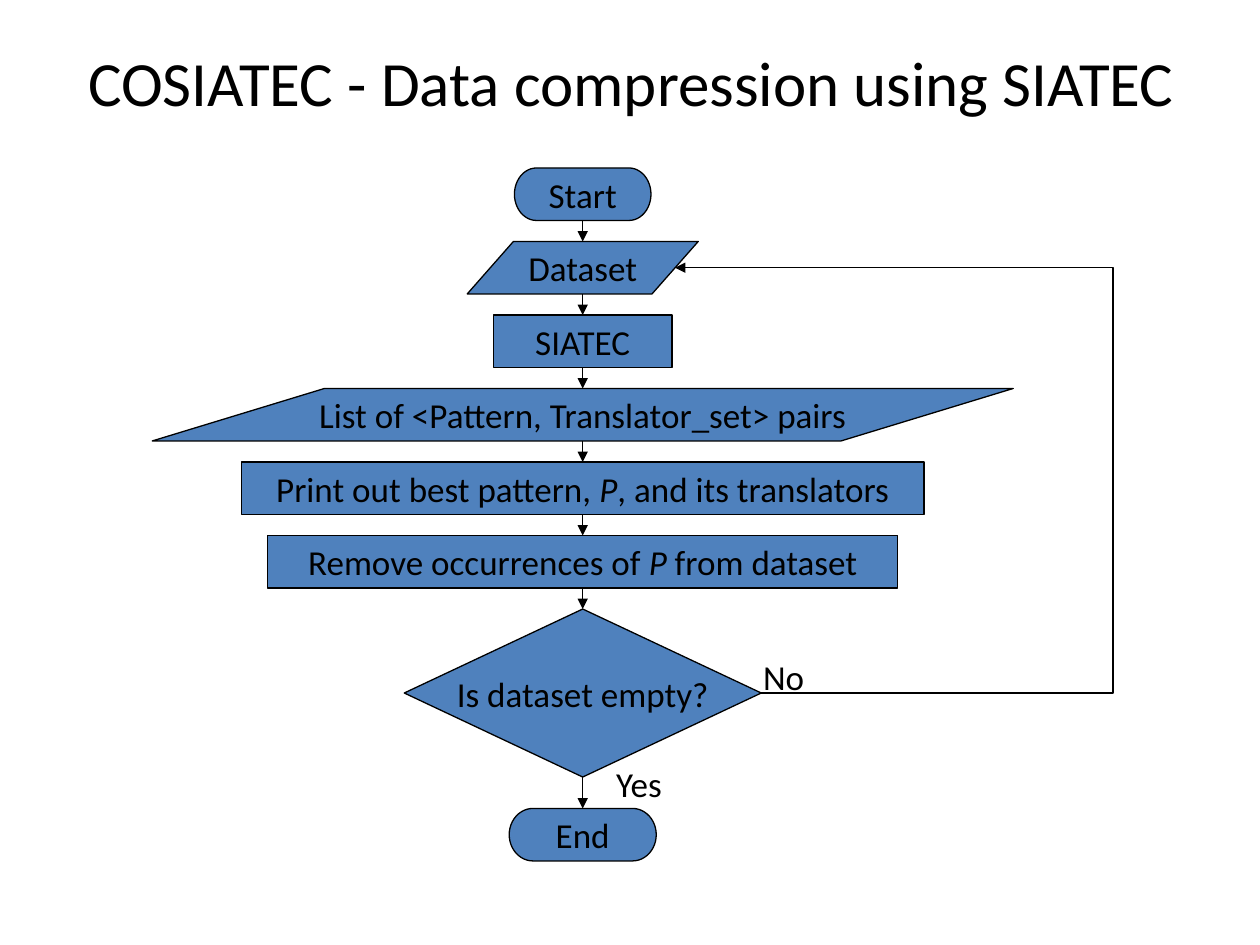
from dataclasses import dataclass

from lxml.etree import SubElement
from pptx import Presentation
from pptx.dml.color import RGBColor
from pptx.enum.shapes import MSO_CONNECTOR, MSO_SHAPE
from pptx.enum.text import MSO_ANCHOR, MSO_AUTO_SIZE, PP_ALIGN
from pptx.oxml.ns import qn
from pptx.shapes.autoshape import Shape
from pptx.shapes.connector import Connector
from pptx.slide import Slide
from pptx.text.text import TextFrame
from pptx.util import Emu, Pt

BLACK = RGBColor(0x00, 0x00, 0x00)
BLUE = RGBColor(0x4F, 0x81, 0xBD)
FONT = "Calibri"
EMU_PER_PX = 7620  # 120 px to the inch

# Flow geometry in px
CENTRE = 555
FIRST_TOP = 160
STEP_HEIGHT = 50
STEP_GAP = 20
LOOP_RIGHT = 1060

TERMINATOR = MSO_SHAPE.FLOWCHART_TERMINATOR
DATA = MSO_SHAPE.FLOWCHART_DATA
PROCESS = MSO_SHAPE.FLOWCHART_PROCESS
DECISION = MSO_SHAPE.FLOWCHART_DECISION
TOP_SITE, BOTTOM_SITE = 0, 2


@dataclass(frozen=True)
class Step:
    kind: MSO_SHAPE
    width: int
    text: str  # parts between asterisks are italic
    height: int = STEP_HEIGHT
    gap_after: int = STEP_GAP


@dataclass(frozen=True)
class Label:
    text: str
    left: int
    top: int
    width: int
    height: int = 51


STEPS = [
    Step(TERMINATOR, 130, "Start"),
    Step(DATA, 220, "Dataset"),
    Step(PROCESS, 170, "SIATEC"),
    Step(DATA, 820, "List of <Pattern, Translator_set> pairs"),
    Step(PROCESS, 650, "Print out best pattern, *P*, and its translators"),
    Step(PROCESS, 600, "Remove occurrences of *P* from dataset"),
    Step(DECISION, 340, "Is dataset empty?", height=160, gap_after=30),
    Step(TERMINATOR, 140, "End"),
]
LABELS = [Label("No", 715, 618, 80), Label("Yes", 575, 720, 100)]


def px(length: int) -> Emu:
    return Emu(length * EMU_PER_PX)


def write(frame: TextFrame, text: str, size: int, align: PP_ALIGN) -> None:
    paragraph = frame.paragraphs[0]
    paragraph.alignment = align
    paragraph.font.name = FONT
    paragraph.font.size = Pt(size)
    paragraph.font.color.rgb = BLACK
    for index, part in enumerate(text.split("*")):
        run = paragraph.add_run()
        run.text = part
        if index % 2:
            run.font.italic = True


def draw_title(slide: Slide, text: str) -> None:
    title = slide.shapes.title
    title.left, title.top, title.width, title.height = px(65), px(35), px(1072), px(85)
    title.text_frame.vertical_anchor = MSO_ANCHOR.MIDDLE
    title.text_frame.auto_size = MSO_AUTO_SIZE.SHAPE_TO_FIT_TEXT
    write(title.text_frame, text, 36, PP_ALIGN.CENTER)


def draw_step(slide: Slide, step: Step, top: int) -> Shape:
    box = slide.shapes.add_shape(
        step.kind, px(CENTRE - step.width // 2), px(top), px(step.width), px(step.height))
    box.shadow.inherit = False
    box.fill.solid()
    box.fill.fore_color.rgb = BLUE
    box.line.color.rgb = BLACK
    box.line.width = Pt(0.75)
    box.text_frame.word_wrap = False
    box.text_frame.vertical_anchor = MSO_ANCHOR.MIDDLE
    write(box.text_frame, step.text, 20, PP_ALIGN.CENTER)
    return box


def draw_label(slide: Slide, label: Label) -> None:
    box = slide.shapes.add_textbox(
        px(label.left), px(label.top), px(label.width), px(label.height))
    box.text_frame.word_wrap = True
    box.text_frame.auto_size = MSO_AUTO_SIZE.SHAPE_TO_FIT_TEXT
    write(box.text_frame, label.text, 20, PP_ALIGN.LEFT)


def draw_arrow(slide: Slide, kind: MSO_CONNECTOR, x1: int, y1: int, x2: int, y2: int) -> Connector:
    arrow = slide.shapes.add_connector(kind, px(x1), px(y1), px(x2), px(y2))
    arrow.line.color.rgb = BLACK
    arrow.line.width = Pt(0.75)
    properties = arrow.element.spPr
    SubElement(properties.find(qn("a:ln")), qn("a:tailEnd"), type="triangle")
    SubElement(properties, qn("a:effectLst"))
    return arrow


def draw_flow(slide: Slide) -> None:
    # Steps, stacked on one centre line
    tops = []
    top = FIRST_TOP
    for step in STEPS:
        tops.append(top)
        top += step.height + step.gap_after
    boxes = [draw_step(slide, step, top) for step, top in zip(STEPS, tops)]

    for label in LABELS:
        draw_label(slide, label)

    # Arrows between steps; the data shape numbers its sites differently
    for i in range(len(STEPS) - 1):
        arrow = draw_arrow(slide, MSO_CONNECTOR.STRAIGHT,
                           CENTRE, tops[i] + STEPS[i].height, CENTRE, tops[i + 1])
        if STEPS[i].kind != DATA:
            arrow.begin_connect(boxes[i], BOTTOM_SITE)
        if STEPS[i + 1].kind != DATA:
            arrow.end_connect(boxes[i + 1], TOP_SITE)

    # Loop from the decision back to the slanted side of the dataset
    dataset, decision = STEPS[1], STEPS[6]
    start_x = CENTRE + decision.width // 2
    end_x = CENTRE + dataset.width * 2 // 5
    loop = draw_arrow(slide, MSO_CONNECTOR.ELBOW,
                      start_x, tops[6] + decision.height // 2,
                      end_x, tops[1] + dataset.height // 2)
    bend = round((start_x - LOOP_RIGHT) / (start_x - end_x) * 100000)
    guides = loop.element.spPr.find(qn("a:prstGeom")).get_or_add_avLst()
    SubElement(guides, qn("a:gd"), name="adj1", fmla=f"val {bend}")


def main() -> None:
    presentation = Presentation()
    presentation.slide_width, presentation.slide_height = px(1200), px(900)
    slide = presentation.slides.add_slide(presentation.slide_layouts[5])
    draw_title(slide, "COSIATEC - Data compression using SIATEC")
    draw_flow(slide)
    presentation.save("out.pptx")


if __name__ == "__main__":
    main()
